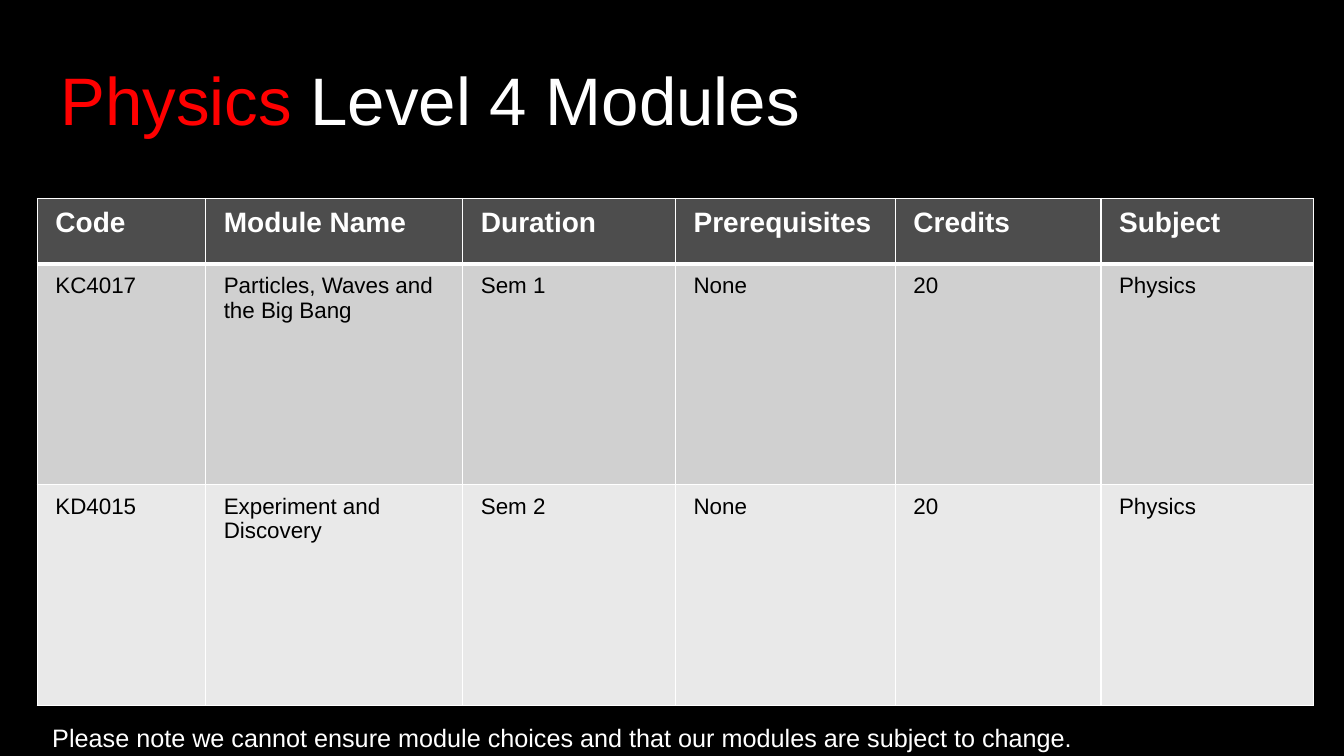
from lxml.etree import SubElement
from pptx import Presentation
from pptx.dml.color import RGBColor as RGB
from pptx.enum.text import MSO_ANCHOR as Anchor
from pptx.oxml.ns import qn
from pptx.util import Inches, Pt

FONT = "Arial"
COLORS = {
    "background": "000000",
    "accent": "FF0000",
    "light": "FFFFFF",
    "dark": "000000",
    "header": "4D4D4D",
    "odd": "D0D0D0",
    "even": "E9E9E9",
}
COLUMN_WIDTHS = [1.67, 2.55, 2.11, 2.18, 2.04, 2.11]
ROW_HEIGHTS = [0.65, 2.19, 2.19]
MODULES = [
    ["Code", "Module Name", "Duration", "Prerequisites", "Credits", "Subject"],
    ["KC4017", "Particles, Waves and the Big Bang", "Sem 1", "None", "20", "Physics"],
    ["KD4015", "Experiment and Discovery", "Sem 2", "None", "20", "Physics"],
]


def color(name):
    return RGB.from_string(COLORS[name])


def add_run(p, text, size, color_name, bold=False):
    r = p.add_run()
    r.text = text
    r.font.name, r.font.size, r.font.bold = FONT, Pt(size), bold
    r.font.color.rgb = color(color_name)


def add_text(slide, box, runs, size, anchor=Anchor.TOP, line_spacing=None):
    tf = slide.shapes.add_textbox(*map(Inches, box)).text_frame
    tf.word_wrap = True
    tf.vertical_anchor = anchor
    p = tf.paragraphs[0]
    p.line_spacing = line_spacing
    for text, color_name in runs:
        add_run(p, text, size, color_name)


def set_border(cell, side, width):
    ln = SubElement(cell._tc.get_or_add_tcPr(), qn(f"a:ln{side}"), w=str(Pt(width)))
    fill = SubElement(ln, qn("a:solidFill"))
    SubElement(fill, qn("a:srgbClr"), val=COLORS["light"])


def fill_cell(cell, text, row):
    is_header = row == 0
    # Thick rule between the header and the first module
    widths = {"L": 1, "R": 1, "T": 3 if row == 1 else 1, "B": 3 if is_header else 1}
    for side, width in widths.items():
        set_border(cell, side, width)
    cell.fill.solid()
    cell.fill.fore_color.rgb = color("header" if is_header else "odd" if row % 2 else "even")
    cell.margin_left = cell.margin_right = Inches(0.18)
    cell.margin_top = cell.margin_bottom = Inches(0.09)
    add_run(cell.text_frame.paragraphs[0], text, 20 if is_header else 16,
            "light" if is_header else "dark", is_header)


def add_module_table(slide, left, top):
    box = left, top, sum(COLUMN_WIDTHS), sum(ROW_HEIGHTS)
    table = slide.shapes.add_table(len(ROW_HEIGHTS), len(COLUMN_WIDTHS),
                                   *map(Inches, box)).table
    table.horz_banding = False
    for column, width in zip(table.columns, COLUMN_WIDTHS):
        column.width = Inches(width)
    for i, (height, texts) in enumerate(zip(ROW_HEIGHTS, MODULES)):
        table.rows[i].height = Inches(height)
        for j, text in enumerate(texts):
            fill_cell(table.cell(i, j), text, i)


def build_modules_slide(prs):
    slide = prs.slides.add_slide(prs.slide_layouts[6])
    slide.background.fill.solid()
    slide.background.fill.fore_color.rgb = color("background")
    # Module table
    add_module_table(slide, 0.37, 1.97)
    # Title
    add_text(slide, (0.5, 0.4, 10.15, 1.25),
             [("Physics", "accent"), (" Level 4 Modules", "light")],
             48, Anchor.MIDDLE, 0.9)
    # Footnote
    add_text(slide, (0.42, 7.12, 12.23, 0.4),
             [("Please note we cannot ensure module choices and that our modules "
               "are subject to change.", "light")], 18)


def main():
    prs = Presentation()
    prs.slide_width, prs.slide_height = Inches(13.33), Inches(7.5)
    build_modules_slide(prs)
    prs.save("out.pptx")


if __name__ == "__main__":
    main()
